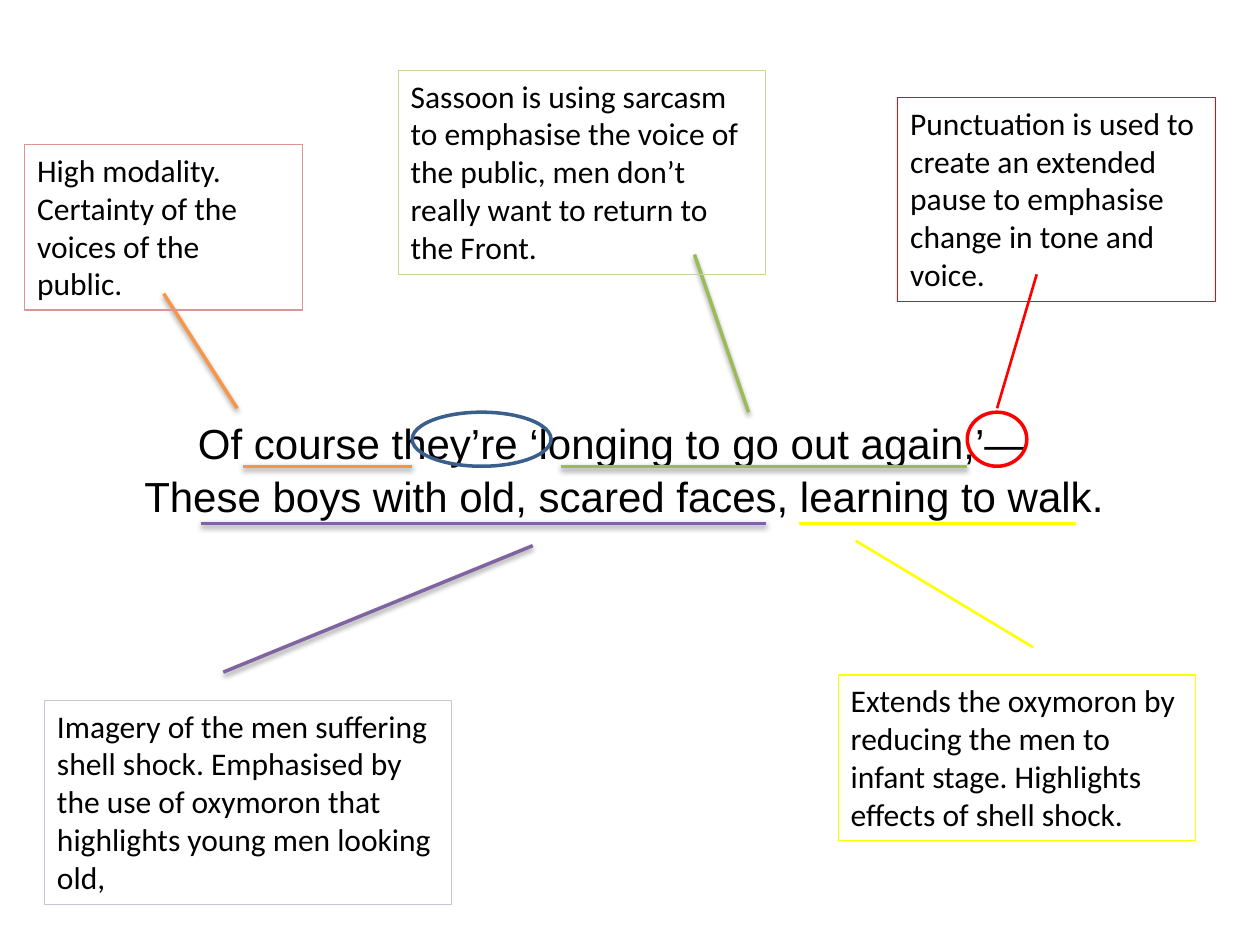
from lxml.etree import SubElement
from pptx import Presentation
from pptx.dml.color import RGBColor
from pptx.enum.shapes import MSO_CONNECTOR, MSO_SHAPE
from pptx.enum.text import MSO_ANCHOR, PP_ALIGN
from pptx.oxml.ns import qn
from pptx.util import Cm, Pt

BLACK = RGBColor(0x00, 0x00, 0x00)
ORANGE = RGBColor(0xF7, 0x96, 0x46)
PINK = RGBColor(0xD9, 0x96, 0x94)
BLUE = RGBColor(0x3A, 0x5F, 0x8C)
GREEN = RGBColor(0x9B, 0xBB, 0x59)
PALE_GREEN = RGBColor(0xC3, 0xD6, 0x9B)
RED = RGBColor(0xFF, 0x00, 0x00)
PURPLE = RGBColor(0x80, 0x64, 0xA2)
LILAC = RGBColor(0xCC, 0xC1, 0xDA)
YELLOW = RGBColor(0xFF, 0xFF, 0x00)

VERSE = ("Of course they’re ‘longing to go out again,’—",
         "These boys with old, scared faces, learning to walk.")


def add_verse(slide):
    box = slide.shapes.add_textbox(Cm(1.3), Cm(8.26), Cm(22.8), Cm(2.31))
    frame = box.text_frame
    frame.word_wrap = True
    frame.margin_right = Cm(0.96)
    frame.text = "\n".join(VERSE)
    for line in frame.paragraphs:
        line.alignment = PP_ALIGN.CENTER
        line.line_spacing = 1.04
        line.font.name = "Arial"
        line.font.size = Pt(24)
        line.font.color.rgb = BLACK
    # The second line sits slightly to the right of the first
    frame.paragraphs[1]._p.get_or_add_pPr().set("marL", str(Cm(0.47)))


def add_outline(slide, preset, place, color, width):
    outline = slide.shapes.add_shape(preset, *map(Cm, place))
    outline.shadow.inherit = False
    outline.fill.background()
    outline.line.color.rgb = color
    outline.line.width = Pt(width)
    return outline


def add_note(slide, text, place, color):
    frame = add_outline(slide, MSO_SHAPE.RECTANGLE, place, color, 0.75).text_frame
    frame.word_wrap = True
    frame.vertical_anchor = MSO_ANCHOR.TOP
    frame.text = text
    paragraph = frame.paragraphs[0]
    paragraph.alignment = PP_ALIGN.LEFT
    paragraph.font.name = "Calibri"
    paragraph.font.size = Pt(18)
    paragraph.font.color.rgb = BLACK


def add_line(slide, ends, color, width=2, shadow=True):
    line = slide.shapes.add_connector(MSO_CONNECTOR.STRAIGHT, *map(Cm, ends))
    line.line.color.rgb = color
    line.line.width = Pt(width)
    effects = SubElement(line._element.spPr, qn("a:effectLst"))
    if shadow:
        outer = SubElement(effects, qn("a:outerShdw"), blurRad=str(Pt(3.1)),
                           dist=str(Pt(1.6)), dir="5400000", rotWithShape="0")
        tint = SubElement(outer, qn("a:srgbClr"), val="000000")
        SubElement(tint, qn("a:alpha"), val="38000")


def main():
    prs = Presentation()
    prs.slide_width, prs.slide_height = Cm(25.4), Cm(19.05)
    slide = prs.slides.add_slide(prs.slide_layouts[6])

    add_verse(slide)

    # Modality
    add_line(slide, (4.9, 9.4, 8.31, 9.4), ORANGE)
    add_line(slide, (4.78, 8.23, 3.3, 5.92), ORANGE)
    add_note(slide, "High modality. Certainty of the voices of the public.",
             (0.5, 2.92, 5.6, 3.33), PINK)
    add_outline(slide, MSO_SHAPE.OVAL, (8.31, 8.31, 2.8, 1.09), BLUE, 2)

    # Sarcasm
    add_line(slide, (11.3, 9.4, 19.5, 9.4), GREEN)
    add_line(slide, (15.09, 8.31, 14, 5.13), GREEN)
    add_note(slide, "Sassoon is using sarcasm to emphasise the voice of the public, "
             "men don’t really want to return to the Front.",
             (8.03, 1.42, 7.4, 4.11), PALE_GREEN)

    # Punctuation
    add_outline(slide, MSO_SHAPE.OVAL, (19.5, 8.31, 1.2, 1.09), RED, 2)
    add_line(slide, (20.1, 8.23, 20.9, 5.53), RED, 1.5, shadow=False)
    add_note(slide, "Punctuation is used to create an extended pause to emphasise "
             "change in tone and voice.", (18.1, 1.97, 6.4, 4.11), RED)

    # Imagery
    add_line(slide, (4.05, 10.55, 15.45, 10.55), PURPLE)
    add_line(slide, (4.5, 13.55, 10.74, 11), PURPLE)
    add_note(slide, "Imagery of the men suffering shell shock. Emphasised by the use of "
             "oxymoron that highlights young men looking old,",
             (0.9, 14.12, 8.2, 4.11), LILAC)

    # Oxymoron
    add_line(slide, (16.1, 10.55, 21.7, 10.55), YELLOW, 1.5, shadow=False)
    add_line(slide, (17.25, 10.9, 20.83, 13.05), YELLOW, 1.5, shadow=False)
    add_note(slide, "Extends the oxymoron by reducing the men to infant stage. "
             "Highlights effects of shell shock.", (16.9, 13.61, 7.2, 3.33), YELLOW)

    prs.save("out.pptx")


if __name__ == "__main__":
    main()
